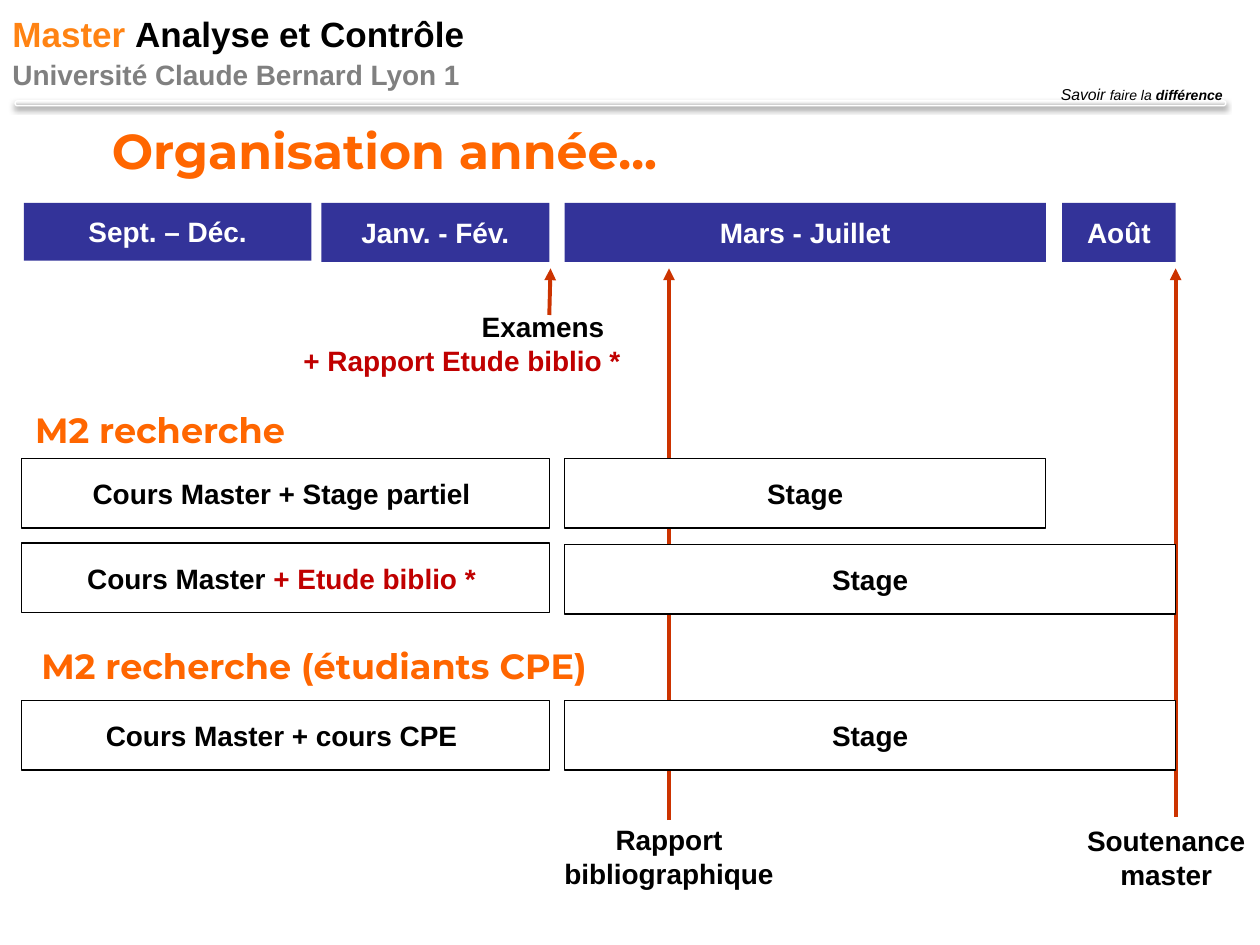
from copy import deepcopy
from lxml import etree
from pptx import Presentation
from pptx.dml.color import RGBColor as Rgb
from pptx.enum.shapes import MSO_CONNECTOR as Connector, MSO_SHAPE as Shape
from pptx.enum.text import MSO_ANCHOR as Anchor, PP_ALIGN as Align
from pptx.oxml import parse_xml
from pptx.oxml.ns import nsdecls, qn
from pptx.util import Pt

COLORS = {
    "orange": "FF6600", "brand": "FF8313", "gray": "808080", "black": "000000",
    "white": "FFFFFF", "navy": "333399", "red": "C00000", "rust": "CC3300",
    "bar_dark": "BEBEBE", "bar_mid": "F7F7F7", "bar_light": "F8F8F8",
}

LEFT, COURSE_LEFT, COURSE_END = 13.7, 12.25, 314
STAGE_LEFT, JULY_END, AUGUST_END = 322.6, 597.6, 671.8
MONTH_TOP, MONTH_HEIGHT, ROW_HEIGHT = 115.9, 33.8, 39.8

MONTHS = [
    ("Sept. – Déc.", LEFT, 178, 33.1),
    ("Janv. - Fév.", 183.6, COURSE_END, MONTH_HEIGHT),
    ("Mars - Juillet", STAGE_LEFT, JULY_END, MONTH_HEIGHT),
    ("Août", 607, AUGUST_END, MONTH_HEIGHT),
]
ROWS = [
    ([("Cours Master + Stage partiel ", {})], 262, 262, JULY_END),
    ([("Cours Master ", {}), ("+ Etude biblio * ", {"color": "red"})], 310.4, 311.2, AUGUST_END),
    ([("Cours Master + cours CPE ", {})], 400.2, 400.2, AUGUST_END),
]
HEADINGS = [
    ("Organisation année...", 28, (56.9, 65.5, 344, 41)),
    ("M2 recherche", 20, (13, 229.7, 166.3, 31.7)),
    ("M2 recherche (étudiants CPE)", 20, (16.6, 365, 341.3, 31)),
]
MILESTONES = [
    ("Soutenance master", "black", Align.CENTER, (607, 467.3, 118.8, 50.4)),
    ("Rapport bibliographique", "black", Align.CENTER, (291.6, 466.6, 181.4, 46)),
    ("Examens", "black", Align.CENTER, (219.6, 173.5, 181.4, 26.6)),
    ("+ Rapport Etude biblio *", "red", Align.LEFT, (166.3, 193, 197.3, 26.6)),
]
LONG_ARROWS = [(671.8, 466.6, 671.8, 153.4), (382.3, 468.7, 382.3, 153.4)]
EXAM_ARROW = (313.9, 180, 314.6, 153.4)

deck = Presentation()
deck.slide_width, deck.slide_height = Pt(720), Pt(540)
page = deck.slides.add_slide(deck.slide_layouts[6])


def color(name):
    return Rgb.from_string(COLORS[name])


def write(box, lines, size=16, font="Arial", ink="black", bold=True,
          align=Align.LEFT, anchor=Anchor.TOP, wrap=False, spacing=None):
    frame = box.text_frame
    frame.word_wrap = wrap
    frame.vertical_anchor = anchor
    for index, line in enumerate(lines):
        para = frame.add_paragraph() if index else frame.paragraphs[0]
        para.alignment = align
        if spacing:
            para.line_spacing = Pt(spacing)
        for text, style in line:
            span = para.add_run()
            span.text = text
            span.font.name = font
            span.font.size = Pt(style.get("size", size))
            span.font.bold = style.get("bold", bold)
            span.font.italic = style.get("italic", False)
            span.font.color.rgb = color(style.get("color", ink))


def add_text(place, lines, **style):
    box = page.shapes.add_textbox(*map(Pt, place))
    write(box, lines, **style)
    return box


def add_box(place, line, fill, ink, border=None):
    box = page.shapes.add_shape(Shape.RECTANGLE, *map(Pt, place))
    box.shadow.inherit = False
    box.fill.solid()
    box.fill.fore_color.rgb = color(fill)
    if border:
        box.line.color.rgb = color(border)
        box.line.width = Pt(0.75)
    else:
        box.line.fill.background()
    write(box, [line], ink=ink, align=Align.CENTER, anchor=Anchor.MIDDLE)


def add_arrow(ends):
    arrow = page.shapes.add_connector(Connector.STRAIGHT, *map(Pt, ends))
    arrow.line.color.rgb = color("rust")
    arrow.line.width = Pt(2.25)
    etree.SubElement(arrow.line._get_or_add_ln(), qn("a:tailEnd"), type="triangle")
    etree.SubElement(arrow._element.spPr, qn("a:effectLst"))


def add_header_bar():
    bar = page.shapes.add_shape(Shape.ROUNDED_RECTANGLE, *map(Pt, (8.6, 57.6, 691.9, 2.9)))
    bar.adjustments[0] = 0.5
    bar.fill.gradient()
    bar.fill.gradient_angle = 90
    stops = bar.fill._xPr.find(qn("a:gradFill")).find(qn("a:gsLst"))
    stops.append(deepcopy(stops[-1]))
    shades = [("bar_dark", 0), ("bar_mid", 0.8), ("bar_light", 1)]
    for stop, (shade, position) in zip(bar.fill.gradient_stops, shades):
        stop.color.rgb = color(shade)
        stop.position = position
    bar.line.color.rgb = color("white")
    bar.line.width = Pt(0.75)
    bar._element.spPr.append(parse_xml(
        f'<a:effectLst {nsdecls("a")}><a:outerShdw blurRad="{Pt(3.1)}" dist="{Pt(1.8)}" '
        f'dir="5400000" rotWithShape="0"><a:srgbClr val="{COLORS["black"]}">'
        '<a:alpha val="35000"/></a:srgbClr></a:outerShdw></a:effectLst>'))


add_header_bar()
motto = add_text((606.2, 48.2, 93.6, 10.8), [[
    ("Savoir ", {"size": 9}), ("faire la ", {}), ("différence", {"bold": True}),
]], size=8, bold=False)
for span in motto.text_frame.paragraphs[0].runs:
    span.font.italic = True
frame = motto.text_frame
frame.margin_left = frame.margin_right = frame.margin_top = frame.margin_bottom = 0
add_text((0, 6.5, 274.3, 48.2), [
    [("Master ", {"color": "brand"}), ("Analyse et Contrôle", {})],
    [("Université Claude Bernard Lyon 1", {"color": "gray", "size": 16})],
], size=20, spacing=21)

for ends in LONG_ARROWS:
    add_arrow(ends)
for text, size, place in HEADINGS:
    add_text(place, [[(text, {})]], size=size, font="Montserrat", ink="orange")
for text, left, right, height in MONTHS:
    add_box((left, MONTH_TOP, right - left, height), [(text, {})], "navy", "white")
for course, course_top, stage_top, stage_end in ROWS:
    add_box((STAGE_LEFT, stage_top, stage_end - STAGE_LEFT, ROW_HEIGHT),
            [("Stage", {})], "white", "black", "black")
    add_box((COURSE_LEFT, course_top, COURSE_END - COURSE_LEFT, ROW_HEIGHT),
            course, "white", "black", "black")
add_arrow(EXAM_ARROW)
for text, ink, align, place in MILESTONES:
    add_text(place, [[(text, {})]], ink=ink, align=align, wrap=True)

deck.save("out.pptx")
